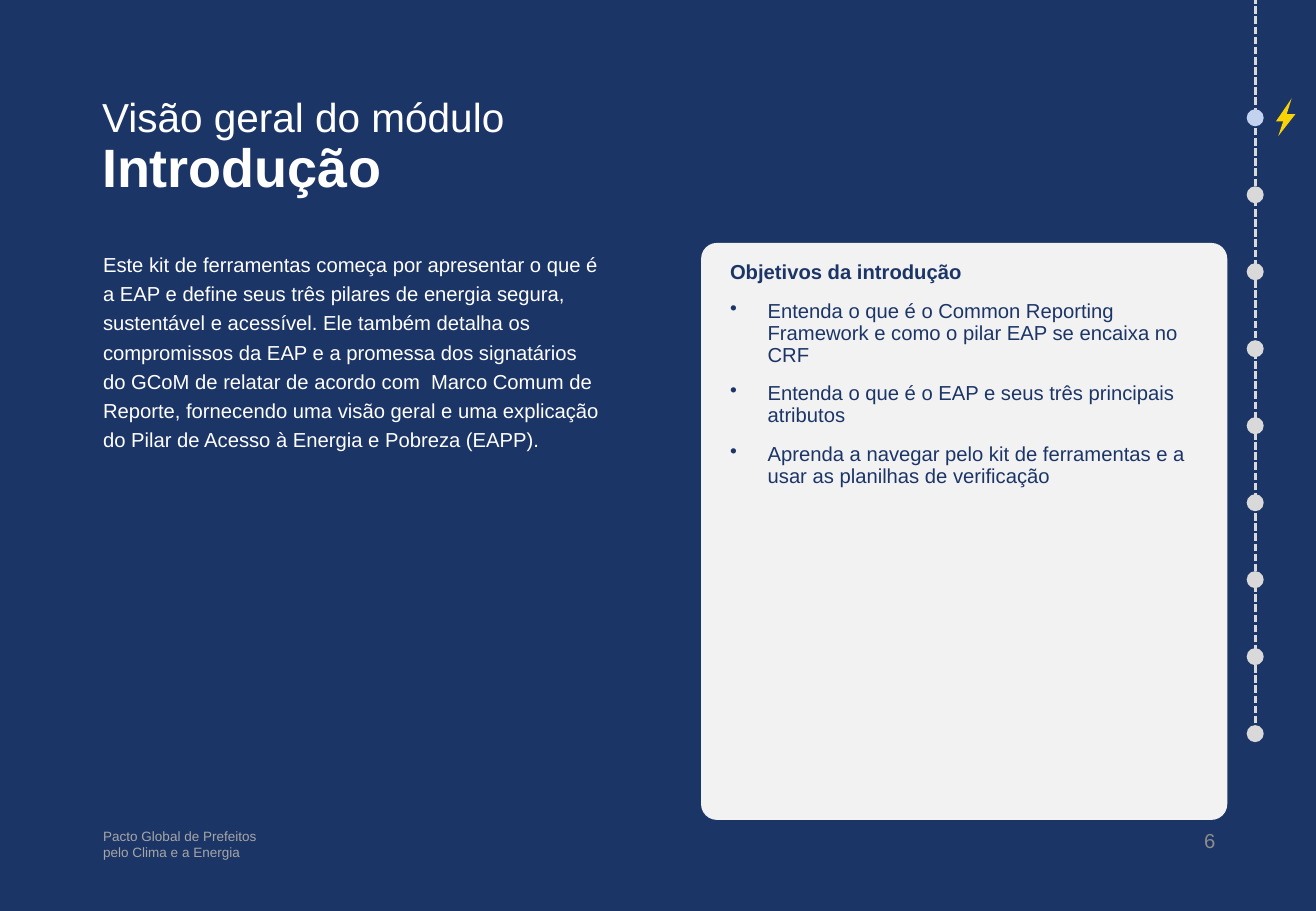
"""Build the module overview slide with its text, objectives panel and progress track."""
import copy
from dataclasses import dataclass

import pptx
import pptx.dml.color
import pptx.enum.dml
import pptx.enum.shapes
import pptx.enum.text
import pptx.oxml.xmlchemy
import pptx.util

Inches = pptx.util.Inches
Pt = pptx.util.Pt
SHAPE = pptx.enum.shapes.MSO_SHAPE
ALIGN = pptx.enum.text.PP_ALIGN

NAVY, WHITE, PANEL = "1C3567", "FFFFFF", "F2F2F2"
TRACK, CURRENT, BOLT = "D9D9D9", "C3D2EF", "FAD307"
TRACK_X, DOT_SIZE, DOT_COUNT = 10.33, 0.14, 9
FIRST_DOT, LAST_DOT = 0.9, 5.97


@dataclass
class Box:
    left: float
    top: float
    width: float
    height: float

    def emu(self):
        return [Inches(v) for v in (self.left, self.top, self.width, self.height)]


@dataclass
class Run:
    text: str
    size: float = 12
    color: str = WHITE
    bold: bool = False


@dataclass
class Para:
    runs: list[Run]
    bullet: bool = False


BOLT_HALVES = [
    [(10.57, 1), (10.5, 1), (10.63, 0.81), (10.58, 0.97)],
    [(10.58, 0.94), (10.66, 0.94), (10.52, 1.12), (10.57, 0.97)],
]
OBJECTIVES = [
    "Entenda o que é o Common Reporting Framework e como o pilar EAP se encaixa no CRF",
    "Entenda o que é o EAP e seus três principais atributos",
    "Aprenda a navegar pelo kit de ferramentas e a usar as planilhas de verificação",
]
INTRO = (
    "Este kit de ferramentas começa por apresentar o que é a EAP e define seus três "
    "pilares de energia segura, sustentável e acessível. Ele também detalha os "
    "compromissos da EAP e a promessa dos signatários do GCoM de relatar de acordo "
    "com  Marco Comum de Reporte, fornecendo uma visão geral e uma explicação do "
    "Pilar de Acesso à Energia e Pobreza (EAPP)."
)


def rgb(color: str):
    return pptx.dml.color.RGBColor.from_string(color)


def paint(sp, color: str):
    sp.fill.solid()
    sp.fill.fore_color.rgb = rgb(color)
    sp.line.fill.background()
    sp.shadow.inherit = False


def add_bullet(p):
    pPr = p._p.get_or_add_pPr()
    pPr.set("marL", str(Inches(0.31)))
    pPr.set("indent", str(-Inches(0.31)))
    bu = pptx.oxml.xmlchemy.OxmlElement("a:buChar")
    bu.set("char", "•")
    pPr.append(bu)


def add_run(p, run: Run):
    for i, line in enumerate(run.text.split("\n")):
        if i:
            p.add_line_break()
            p._p[-1].append(copy.deepcopy(p.runs[-1]._r.rPr))
        if line:
            r = p.add_run()
            r.text = line
            r.font.name = "Arial"
            r.font.size = Pt(run.size)
            r.font.bold = run.bold
            r.font.color.rgb = rgb(run.color)


def write(sp, paras: list[Para], *, align=ALIGN.LEFT, spacing=1.0, inset=(0.1, 0.05)):
    tf = sp.text_frame
    tf.word_wrap = True
    tf.auto_size = pptx.enum.text.MSO_AUTO_SIZE.NONE
    tf.vertical_anchor = pptx.enum.text.MSO_ANCHOR.TOP
    tf.margin_left = tf.margin_right = Inches(inset[0])
    tf.margin_top = tf.margin_bottom = Inches(inset[1])
    for i, para in enumerate(paras):
        p = tf.add_paragraph() if i else tf.paragraphs[0]
        if para.bullet:
            add_bullet(p)
        p.alignment = align
        p.line_spacing = spacing
        p.space_before = Pt(10 if i else 0)
        for run in para.runs:
            add_run(p, run)


def add_text(s, box: Box, run: Run, **fmt):
    write(s.shapes.add_textbox(*box.emu()), [Para([run])], **fmt)


def add_title(s):
    sp = s.shapes.title
    sp.left, sp.top, sp.width, sp.height = Box(0.74, 0.75, 9.34, 1.08).emu()
    runs = [Run("Visão geral do módulo\n", 24), Run("Introdução", 32, bold=True)]
    write(sp, [Para(runs)], spacing=0.9)


def add_panel(s):
    sp = s.shapes.add_shape(SHAPE.ROUNDED_RECTANGLE, *Box(5.77, 2, 4.33, 4.75).emu())
    sp.adjustments[0] = 0.03
    paint(sp, PANEL)
    heading = Para([Run("Objetivos da introdução", color=NAVY, bold=True)])
    items = [Para([Run(text, color=NAVY)], bullet=True) for text in OBJECTIVES]
    write(sp, [heading, *items], spacing=0.9, inset=(0.2, 0.12))


def add_track(s):
    x = Inches(TRACK_X)
    line = s.shapes.add_connector(
        pptx.enum.shapes.MSO_CONNECTOR.STRAIGHT, x, Inches(6.04), x, 0)
    line.line.color.rgb = rgb(TRACK)
    line.line.width = Pt(1.5)
    line.line.dash_style = pptx.enum.dml.MSO_LINE.SQUARE_DOT
    line._element.spPr.append(pptx.oxml.xmlchemy.OxmlElement("a:effectLst"))
    pitch = (LAST_DOT - FIRST_DOT) / (DOT_COUNT - 1)
    for i in range(DOT_COUNT):
        box = Box(TRACK_X - DOT_SIZE / 2, FIRST_DOT + i * pitch, DOT_SIZE, DOT_SIZE)
        dot = s.shapes.add_shape(SHAPE.OVAL, *box.emu())
        paint(dot, TRACK if i else CURRENT)


def add_bolt(s):
    for half in BOLT_HALVES:
        points = [(Inches(x), Inches(y)) for x, y in half]
        builder = s.shapes.build_freeform(*points[0])
        builder.add_line_segments(points[1:], close=True)
        paint(builder.convert_to_shape(), BOLT)


def main():
    prs = pptx.Presentation()
    prs.slide_width, prs.slide_height = Inches(10.83), Inches(7.5)
    s = prs.slides.add_slide(prs.slide_layouts.get_by_name("Title Only"))
    s.background.fill.solid()
    s.background.fill.fore_color.rgb = rgb(NAVY)
    add_title(s)
    add_text(s, Box(0.75, 1.99, 4.33, 4.76), Run(INTRO), spacing=1.2)
    add_panel(s)
    add_track(s)
    add_bolt(s)
    footer = Run("Pacto Global de Prefeitos\npelo Clima e a Energia", 8, "A6A6A6")
    add_text(s, Box(0.75, 6.77, 1.83, 0.4), footer)
    add_text(s, Box(9.58, 6.77, 0.52, 0.4), Run("6", color="8C8C8C"), align=ALIGN.RIGHT)
    prs.save("out.pptx")


if __name__ == "__main__":
    main()
